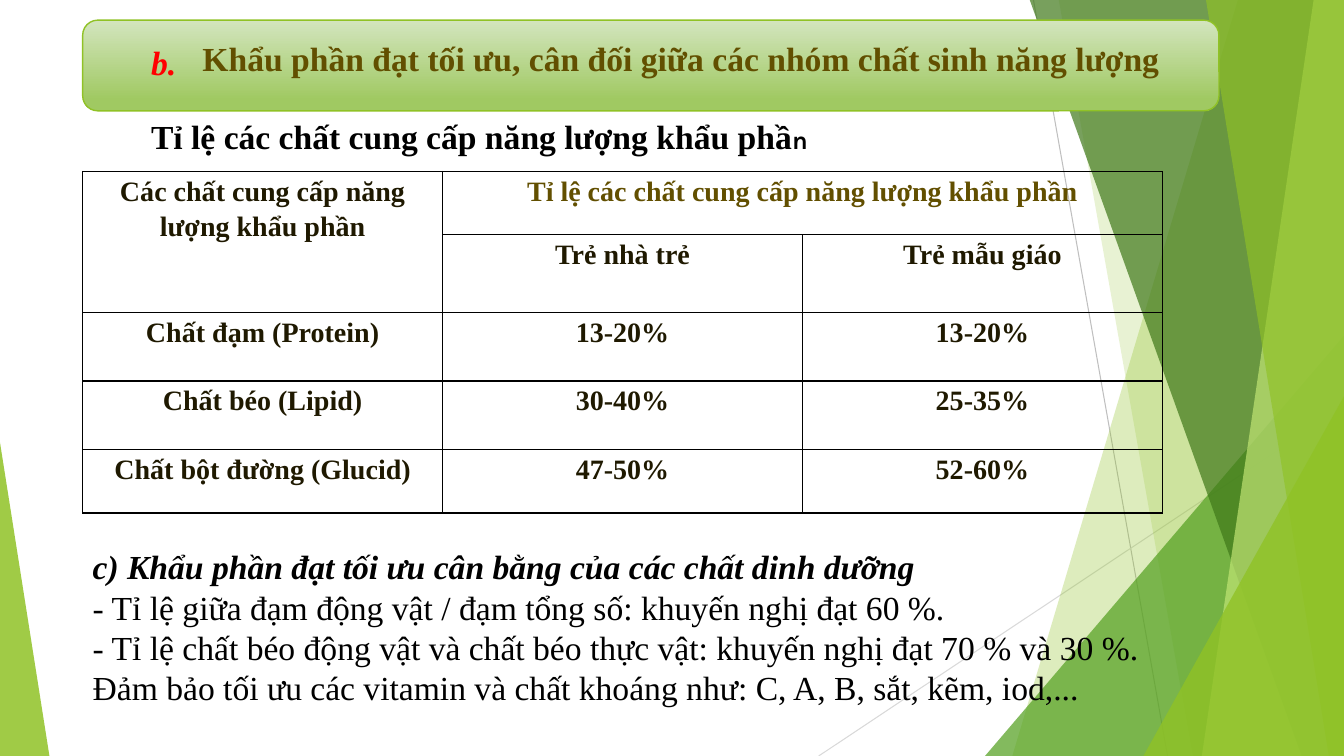
"""Build a slide on the balance of energy nutrients in children's diets."""
from dataclasses import dataclass

from lxml import etree
from pptx import Presentation
from pptx.dml.color import RGBColor
from pptx.enum.shapes import MSO_CONNECTOR, MSO_SHAPE
from pptx.enum.text import MSO_ANCHOR, PP_ALIGN
from pptx.oxml.ns import qn
from pptx.util import Inches, Pt

STRAIGHT = MSO_CONNECTOR.STRAIGHT
TRIANGLE = MSO_SHAPE.ISOSCELES_TRIANGLE
ROUNDED = MSO_SHAPE.ROUNDED_RECTANGLE
CENTER = PP_ALIGN.CENTER
TOP, MIDDLE = MSO_ANCHOR.TOP, MSO_ANCHOR.MIDDLE

WIDTH, HEIGHT = 13.33, 7.5
MARGIN = 0.82


@dataclass(frozen=True)
class Theme:
    """Colours, fonts and type sizes of the slide."""
    lime: str = "90C226"
    green: str = "54A021"
    forest: str = "3F7819"
    pale_lime: str = "C0E474"
    banner_top: str = "D3E5BE"
    banner_bottom: str = "A0C962"
    ray: str = "BFBFBF"
    faint_ray: str = "D9D9D9"
    black: str = "000000"
    red: str = "FF0000"
    olive: str = "624F00"
    ink: str = "1F1900"
    serif: str = "Times New Roman"
    sans: str = "Karla"
    body: int = 24
    table: int = 20
    small: int = 18


def rgb(color):
    """Turn a hex string into a colour."""
    return RGBColor.from_string(color)


def write(paragraph, text, *, size, color, font, bold=False, italic=False):
    """Add a formatted run to a paragraph."""
    run = paragraph.add_run()
    run.text = text
    run.font.size = Pt(size)
    run.font.name = font
    run.font.bold = bold
    run.font.italic = italic
    run.font.color.rgb = rgb(color)


class SlideBuilder:
    """Draw elements on one slide in one style."""

    def __init__(self, slide, theme):
        """Keep the slide and its theme."""
        self.slide = slide
        self.theme = theme

    def ray(self, start, end, color):
        """Draw a thin straight line."""
        line = self.slide.shapes.add_connector(
            STRAIGHT, *(Inches(v) for v in (*start, *end)))
        line.line.color.rgb = rgb(color)
        line.line.width = Pt(0.75)
        etree.SubElement(line._element.spPr, qn("a:effectLst"))

    def tint(self, shape, color, opacity):
        """Give a shape a translucent fill without outline."""
        shape.shadow.inherit = False
        shape.line.fill.background()
        shape.fill.solid()
        shape.fill.fore_color.rgb = rgb(color)
        swatch = shape._element.spPr.find(qn("a:solidFill"))[0]
        etree.SubElement(swatch, qn("a:alpha"), val=str(opacity * 1000))

    def facet(self, top_x, bottom_x, color, opacity):
        """Draw a full-height band reaching the right edge."""
        outline = self.slide.shapes.build_freeform(
            Inches(top_x), Inches(-0.01))
        corners = ((WIDTH, -0.01), (WIDTH, HEIGHT), (bottom_x, HEIGHT))
        outline.add_line_segments(
            [(Inches(x), Inches(y)) for x, y in corners], close=True)
        self.tint(outline.convert_to_shape(), color, opacity)

    def corner(self, left, top, width, apex, color, opacity):
        """Draw a triangle standing on the bottom edge."""
        shape = self.slide.shapes.add_shape(
            TRIANGLE, Inches(left), Inches(top),
            Inches(width), Inches(HEIGHT - top))
        shape.adjustments[0] = apex
        self.tint(shape, color, opacity)

    def banner(self, left, top, width, height):
        """Draw the rounded gradient title bar."""
        bar = self.slide.shapes.add_shape(
            ROUNDED, *(Inches(v) for v in (left, top, width, height)))
        bar.shadow.inherit = False
        bar.fill.gradient()
        bar.fill.gradient_angle = 270
        stops = ((0, self.theme.banner_top), (0.88, self.theme.banner_bottom))
        for stop, (position, color) in zip(bar.fill.gradient_stops, stops):
            stop.position = position
            stop.color.rgb = rgb(color)
        bar.line.color.rgb = rgb(self.theme.lime)
        bar.line.width = Pt(1)

    def text(self, box, paragraphs, anchor=TOP):
        """Add a text box of paragraphs, each a list of (text, format) runs."""
        frame = self.slide.shapes.add_textbox(
            *(Inches(v) for v in box)).text_frame
        frame.word_wrap = True
        frame.vertical_anchor = anchor
        base = dict(size=self.theme.body, color=self.theme.black,
                    font=self.theme.serif)
        for index, runs in enumerate(paragraphs):
            paragraph = frame.add_paragraph() if index else frame.paragraphs[0]
            for words, style in runs:
                write(paragraph, words, **{**base, **style})

    def border(self, cell):
        """Draw a thin black border around a cell."""
        properties = cell._tc.get_or_add_tcPr()
        for side in ("a:lnL", "a:lnR", "a:lnT", "a:lnB"):
            edge = etree.SubElement(properties, qn(side), w=str(Pt(1)))
            fill = etree.SubElement(edge, qn("a:solidFill"))
            etree.SubElement(fill, qn("a:srgbClr"), val=self.theme.black)

    def table(self, left, top, column_width, row_heights, rows, merges, accent):
        """Add a bordered table; accent is the cell set in olive."""
        grid = self.slide.shapes.add_table(
            len(rows), len(rows[0]), Inches(left), Inches(top),
            Inches(column_width * len(rows[0])),
            Inches(sum(row_heights))).table
        grid.first_row = grid.horz_banding = False
        for column in grid.columns:
            column.width = Inches(column_width)
        for row, height in zip(grid.rows, row_heights):
            row.height = Inches(height)
        for first, last in merges:
            grid.cell(*first).merge(grid.cell(*last))
        for r, row in enumerate(rows):
            for c, words in enumerate(row):
                cell = grid.cell(r, c)
                self.border(cell)
                cell.fill.background()
                cell.margin_left = cell.margin_right = Inches(0.07)
                cell.margin_top = cell.margin_bottom = 0
                if not words:
                    continue
                paragraph = cell.text_frame.paragraphs[0]
                paragraph.alignment = CENTER
                paragraph.line_spacing = 1.15
                paragraph.space_after = Pt(5)
                color = self.theme.olive if (r, c) == accent else self.theme.ink
                write(paragraph, words, size=self.theme.table, color=color,
                      font=self.theme.serif, bold=True)


def main():
    """Build and save the slide."""
    deck = Presentation()
    deck.slide_width, deck.slide_height = Inches(WIDTH), Inches(HEIGHT)
    theme = Theme()
    page = SlideBuilder(deck.slides.add_slide(deck.slide_layouts[6]), theme)

    page.ray((10.25, 0), (11.58, HEIGHT), theme.ray)
    page.ray((WIDTH, 4.03), (8.12, HEIGHT), theme.faint_ray)
    page.facet(12.28, 10.04, theme.lime, 30)
    page.facet(10.5, 11.83, theme.lime, 20)
    page.corner(9.77, 3.33, 3.56, 1, theme.green, 72)
    page.facet(10.21, 12.91, theme.forest, 70)
    page.facet(13.03, 11.92, theme.pale_lime, 70)
    page.facet(11.96, 13.18, theme.lime, 65)
    page.corner(11.34, 3.93, 1.99, 1, theme.lime, 80)
    page.corner(0, 4.39, 0.49, 0, theme.lime, 85)

    page.banner(MARGIN, 0.2, 11.27, 0.9)
    bold = dict(bold=True)
    bold_italic = dict(bold=True, italic=True)
    page.text((1.4, 0.2, 10.29, 0.83),
              [[("b.", dict(bold_italic, color=theme.red))]], MIDDLE)
    page.text((1.91, 0.33, 10.18, 0.5), [[(
        "Khẩu phần đạt tối ưu, cân đối giữa các nhóm chất sinh năng lượng",
        dict(bold, color=theme.olive))]])
    page.text((1.4, 1.1, 10.9, 0.5), [[
        ("Tỉ lệ các chất cung cấp năng lượng khẩu phầ", bold),
        ("n", dict(bold, font=theme.sans, size=theme.small))]])

    page.table(MARGIN, 1.7, 3.57, (0.63, 0.77, 0.68, 0.68, 0.63), (
        ("Các chất cung cấp năng lượng khẩu phần",
         "Tỉ lệ các chất cung cấp năng lượng khẩu phần", ""),
        ("", "Trẻ nhà trẻ", "Trẻ mẫu giáo"),
        ("Chất đạm (Protein)", "13-20%", "13-20%"),
        ("Chất béo (Lipid)", "30-40%", "25-35%"),
        ("Chất bột đường (Glucid)", "47-50%", "52-60%"),
    ), merges=(((0, 0), (1, 0)), ((0, 1), (0, 2))), accent=(0, 1))

    page.text((MARGIN, 5.37, 10.62, 2.02), [
        [("c) Khẩu phần đạt tối ưu cân bằng của các chất dinh dưỡng",
          bold_italic)],
        [("- Tỉ lệ giữa đạm động vật / đạm tổng số: khuyến nghị đạt 60 %.",
          {})],
        [("- Tỉ lệ chất béo động vật và chất béo thực vật: khuyến nghị đạt "
          "70 % và 30 %. Đảm bảo tối ưu các vitamin và chất khoáng như: "
          "C, A, B, sắt, kẽm, iod,...", {})]])
    deck.save("out.pptx")


if __name__ == "__main__":
    main()
